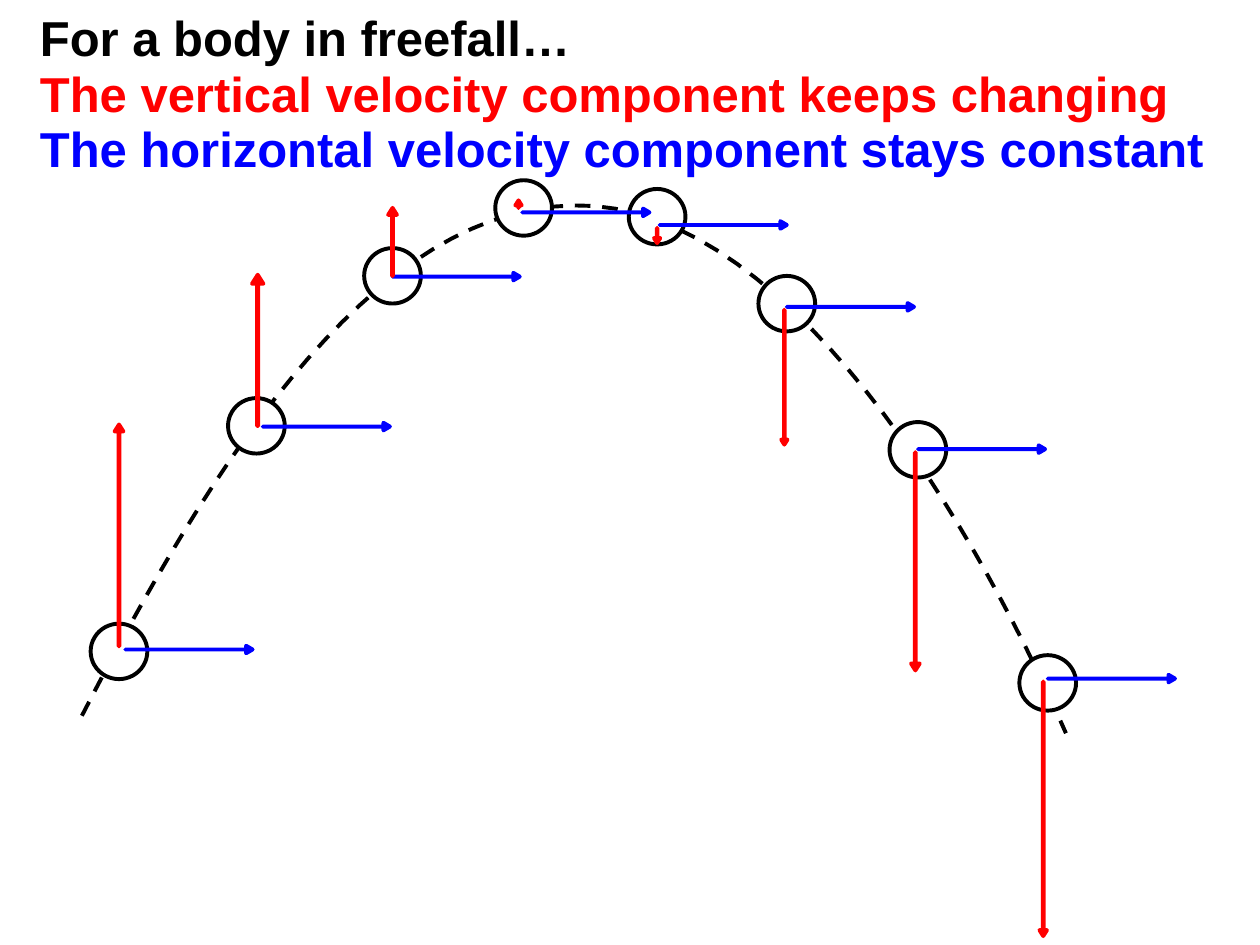
import pptx
import pptx.util
import pptx.dml.color
import pptx.enum.dml
import pptx.enum.shapes
import pptx.enum.text

Pt = pptx.util.Pt
MSO_SHAPE = pptx.enum.shapes.MSO_SHAPE
BLACK = pptx.dml.color.RGBColor(0, 0, 0)
WHITE = pptx.dml.color.RGBColor(255, 255, 255)
RED = pptx.dml.color.RGBColor(255, 0, 0)
BLUE = pptx.dml.color.RGBColor(0, 0, 255)

TITLE = [
    ("For a body in freefall…", BLACK),
    ("The vertical velocity component keeps changing", RED),
    ("The horizontal velocity component stays constant", BLUE),
]
TRAJECTORY = [
    [(46.8, 409), (113, 280.8), (206.6, 119.5), (327.6, 117.4)],
    [(327.6, 117.4), (448.6, 114.5), (558, 301.7), (609.1, 419)],
]
BALLS = [
    (51.8, 356.4), (130.3, 227.5), (208.1, 141.8), (283, 103),
    (359.3, 108), (433.4, 157.7), (508.3, 241.2), (582.5, 374.4),
]
HORIZONTAL = [
    (105.8, 334.8), (184.3, 207.4), (258.5, 121.7), (332.6, 85),
    (411.1, 92.2), (483.8, 139), (558.7, 220.3), (632.9, 351.4),
]
RISING = [
    (65.5, 242.6, 5, 126.7), (144, 157, 6.5, 86.4),
    (221.8, 118.8, 5, 38.9), (294.5, 114.5, 3.6, 4.3),
]
FALLING = [
    (373.7, 130.3, 3.6, 8.6), (446.4, 177.1, 3.6, 77),
    (520.6, 258.5, 5, 124.6), (594, 389.5, 4.3, 145.4),
]


def add_run(p, text, font="Arial", size=28, color=BLACK, bold=True):
    r = p.add_run()
    r.text = text
    r.font.name = font
    r.font.size = Pt(size)
    r.font.bold = bold
    r.font.color.rgb = color


def bezier_point(curve, t):
    weights = ((1 - t) ** 3, 3 * t * (1 - t) ** 2, 3 * t * t * (1 - t), t ** 3)
    return tuple(Pt(sum(w * q[axis] for w, q in zip(weights, curve))) for axis in (0, 1))


class Canvas:
    line_width = 2.25

    def __init__(self, slide):
        self.s = slide

    def outline(self, sp, color):
        sp.shadow.inherit = False
        sp.line.color.rgb = color
        sp.line.width = Pt(self.line_width)

    def shape(self, kind, box, fill, line):
        sp = self.s.shapes.add_shape(kind, *(Pt(v) for v in box))
        sp.fill.solid()
        sp.fill.fore_color.rgb = fill
        self.outline(sp, line)
        return sp

    def title(self, lines, box):
        sp = self.s.shapes.add_textbox(*(Pt(v) for v in box))
        tf = sp.text_frame
        tf.word_wrap = True
        tf.vertical_anchor = pptx.enum.text.MSO_ANCHOR.TOP
        p = tf.paragraphs[0]
        p.line_spacing = 0.94
        for i, (text, color) in enumerate(lines):
            if i:
                p.add_line_break()
            add_run(p, text, color=color)

    def dashed_curve(self, curves, steps=30):
        points = [bezier_point(c, i / steps) for c in curves for i in range(1, steps + 1)]
        start = bezier_point(curves[0], 0)
        builder = self.s.shapes.build_freeform(*start)
        builder.add_line_segments(points, close=False)
        sp = builder.convert_to_shape()
        sp.fill.background()
        self.outline(sp, BLACK)
        sp.line.dash_style = pptx.enum.dml.MSO_LINE.DASH

    def ball(self, left, top):
        self.shape(MSO_SHAPE.OVAL, (left, top, 32.4, 31.7), WHITE, BLACK)

    def arrow(self, box, color, rotation=0, adjustments=(0.094, 0.788)):
        sp = self.shape(MSO_SHAPE.DOWN_ARROW, box, color, color)
        sp.rotation = rotation
        for i, value in enumerate(adjustments):
            sp.adjustments[i] = value


def main():
    prs = pptx.Presentation()
    prs.slide_width, prs.slide_height = Pt(720), Pt(540)
    canvas = Canvas(prs.slides.add_slide(prs.slide_layouts[6]))
    canvas.title(TITLE, (15.8, 3.6, 686.9, 102.2))
    canvas.dashed_curve(TRAJECTORY)
    for left, top in BALLS:
        canvas.ball(left, top)
    for left, top in HORIZONTAL:
        canvas.arrow((left, top, 4.3, 72.7), BLUE, rotation=270, adjustments=(0, 0.854))
    for box in RISING:
        canvas.arrow(box, RED, rotation=180)
    for box in FALLING:
        canvas.arrow(box, RED)
    prs.save("out.pptx")


if __name__ == "__main__":
    main()
